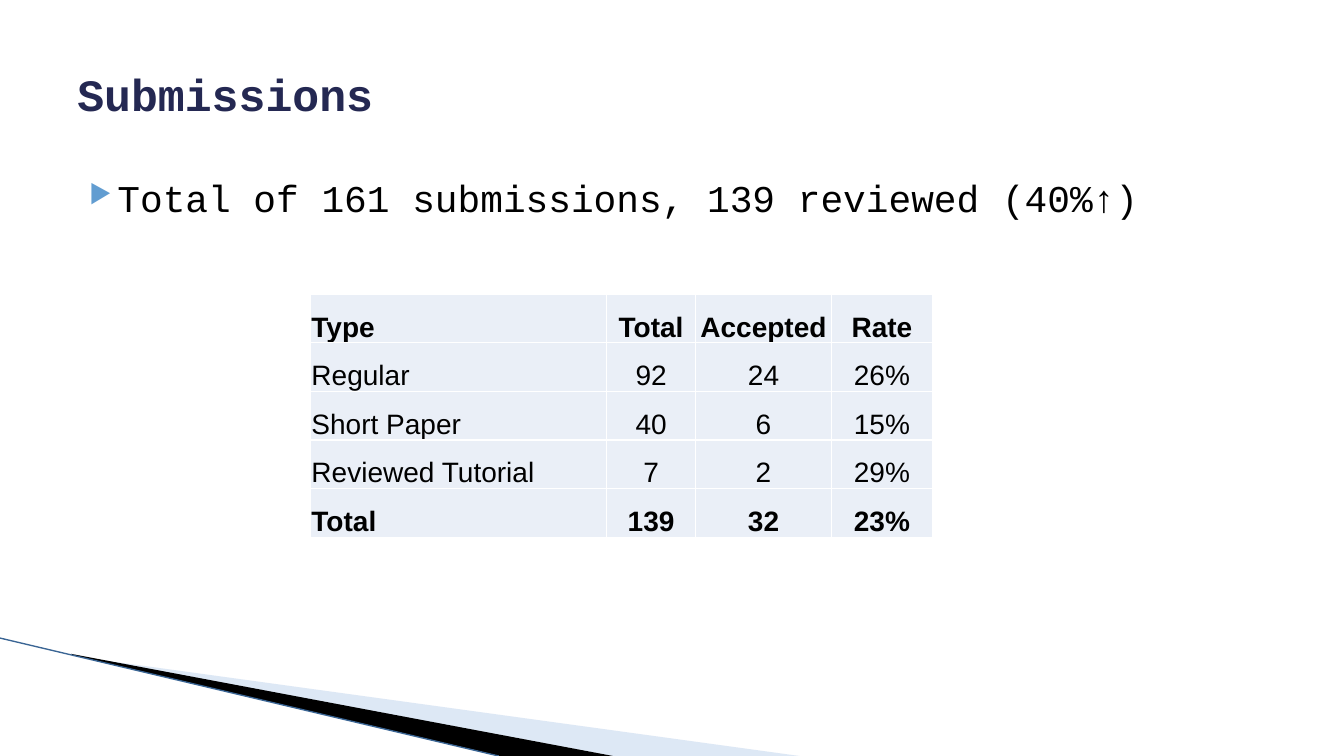
from typing import NamedTuple

from pptx import Presentation
from pptx.dml.color import RGBColor as RGB
from pptx.enum.shapes import MSO_CONNECTOR as Link
from pptx.enum.text import MSO_ANCHOR as Anchor, PP_ALIGN as Align
from pptx.oxml import parse_xml
from pptx.oxml.ns import nsdecls
from pptx.util import Emu, Inches, Pt

WHITE = RGB(0xFF, 0xFF, 0xFF)
BLACK = RGB(0x00, 0x00, 0x00)
NAVY = RGB(0x24, 0x28, 0x52)
PALE = RGB(0xAB, 0xC6, 0xE6)
STEEL = RGB(0x3A, 0x65, 0x94)
SKY = RGB(0x62, 0x9D, 0xD1)
CELL = RGB(0xEA, 0xEF, 0xF7)
MONO, SANS = "Courier New", "Arial"

WIDTH, HEIGHT = Inches(13.33), Inches(7.5)


class Box(NamedTuple):
    """A frame in percent of the slide's width and height."""
    left: float
    top: float
    width: float
    height: float


class Wedge(NamedTuple):
    """A filled outline with its corners in percent of the slide."""
    color: RGB
    alpha: int
    points: list[tuple[float, float]]


class Column(NamedTuple):
    width: float
    align: Align
    cells: list[str]


TITLE = Box(5, 4, 90, 16.67)
BODY = Box(5, 22.4, 90, 66)
TABLE = Box(23.1, 38.93, 46.28, 32.15)

WEDGES = [
    Wedge(PALE, 40, [(5.47, 86.8), (59.5, 100), (45.6, 100), (5.47, 86.67)]),
    Wedge(BLACK, 100, [(5.3, 86.5), (45.6, 100), (37.2, 100), (5.4, 86.67)]),
]
EDGE = [(0, 84.4), (37.1, 100)]

COLUMNS = [
    Column(22.05, Align.LEFT,
           ["Type", "Regular", "Short Paper", "Reviewed Tutorial", "Total"]),
    Column(6.6, Align.CENTER, ["Total", "92", "40", "7", "139"]),
    Column(10.13, Align.CENTER, ["Accepted", "24", "6", "2", "32"]),
    Column(7.5, Align.CENTER, ["Rate", "26%", "15%", "29%", "23%"]),
]


def across(share: float) -> Emu:
    return Emu(round(WIDTH * share / 100))


def down(share: float) -> Emu:
    return Emu(round(HEIGHT * share / 100))


def spot(point: tuple[float, float]) -> tuple[Emu, Emu]:
    return across(point[0]), down(point[1])


def frame(box: Box) -> tuple[Emu, Emu, Emu, Emu]:
    return *spot(box[:2]), *spot(box[2:])


def write(part, text: str, *, size: float, font: str, color: RGB = BLACK,
          bold: bool = False, align: Align = Align.LEFT) -> None:
    line = part.text_frame.paragraphs[0]
    line.alignment = align
    run = line.add_run()
    run.text = text
    run.font.size, run.font.name, run.font.bold = Pt(size), font, bold
    run.font.color.rgb = color


def add_wedge(slide, wedge: Wedge) -> None:
    first, *rest = map(spot, wedge.points)
    pen = slide.shapes.build_freeform(*first)
    pen.add_line_segments(rest, close=True)
    shape = pen.convert_to_shape()
    shape.shadow.inherit = False
    shape.line.fill.background()
    shape.fill.solid()
    shape.fill.fore_color.rgb = wedge.color
    if wedge.alpha < 100:
        tone = shape.fill._xPr.solidFill[0]
        tone.append(parse_xml(
            f'<a:alpha {nsdecls("a")} val="{wedge.alpha * 1000}"/>'))


def add_edge(slide) -> None:
    start, end = map(spot, EDGE)
    line = slide.shapes.add_connector(Link.STRAIGHT, *start, *end)
    line.line.color.rgb = STEEL
    line.line.width = Pt(0.95)
    line._element.spPr.append(parse_xml(f'<a:effectLst {nsdecls("a")}/>'))


def add_point(slide, text: str) -> None:
    box = slide.shapes.add_textbox(*frame(BODY))
    box.text_frame.word_wrap = True
    props = box.text_frame.paragraphs[0]._p.get_or_add_pPr()
    props.set("marL", str(across(3)))
    props.set("indent", str(-across(2.1)))
    for mark in (f'buClr {nsdecls("a")}><a:srgbClr val="{SKY}"/></a:buClr>',
                 f'buSzPct {nsdecls("a")} val="68000"/>',
                 f'buChar {nsdecls("a")} char="▶"/>'):
        props.append(parse_xml(f"<a:{mark}"))
    write(box, text, size=27, font=MONO)


def style_cell(cell) -> None:
    cell.fill.solid()
    cell.fill.fore_color.rgb = CELL
    cell.vertical_anchor = Anchor.BOTTOM
    cell.margin_left = cell.margin_right = cell.margin_top = Inches(0.01)
    cell.margin_bottom = 0
    props = cell._tc.get_or_add_tcPr()
    for place, side in enumerate("LRTB"):
        props.insert(place, parse_xml(
            f'<a:ln{side} {nsdecls("a")} w="{Pt(1)}"><a:solidFill>'
            f'<a:srgbClr val="{WHITE}"/></a:solidFill></a:ln{side}>'))


def add_grid(slide) -> None:
    count = len(COLUMNS[0].cells)
    table = slide.shapes.add_table(count, len(COLUMNS), *frame(TABLE)).table
    for row in table.rows:
        row.height = down(TABLE.height / count)
    for c, column in enumerate(COLUMNS):
        table.columns[c].width = across(column.width)
        for r, text in enumerate(column.cells):
            cell = table.cell(r, c)
            style_cell(cell)
            write(cell, text, size=20, font=SANS, align=column.align,
                  bold=r in (0, count - 1))


def main() -> None:
    deck = Presentation()
    deck.slide_width, deck.slide_height = WIDTH, HEIGHT
    slide = deck.slides.add_slide(deck.slide_layouts[5])

    # Corner wedges
    for wedge in WEDGES:
        add_wedge(slide, wedge)
    add_edge(slide)

    # Title
    title = slide.shapes.title
    title.left, title.top, title.width, title.height = frame(TITLE)
    title.text_frame.vertical_anchor = Anchor.MIDDLE
    write(title, "Submissions", size=32, font=MONO, color=NAVY, bold=True)

    # Summary and table
    add_point(slide, "Total of 161 submissions, 139 reviewed (40%↑)")
    add_grid(slide)

    deck.save("out.pptx")


if __name__ == "__main__":
    main()
